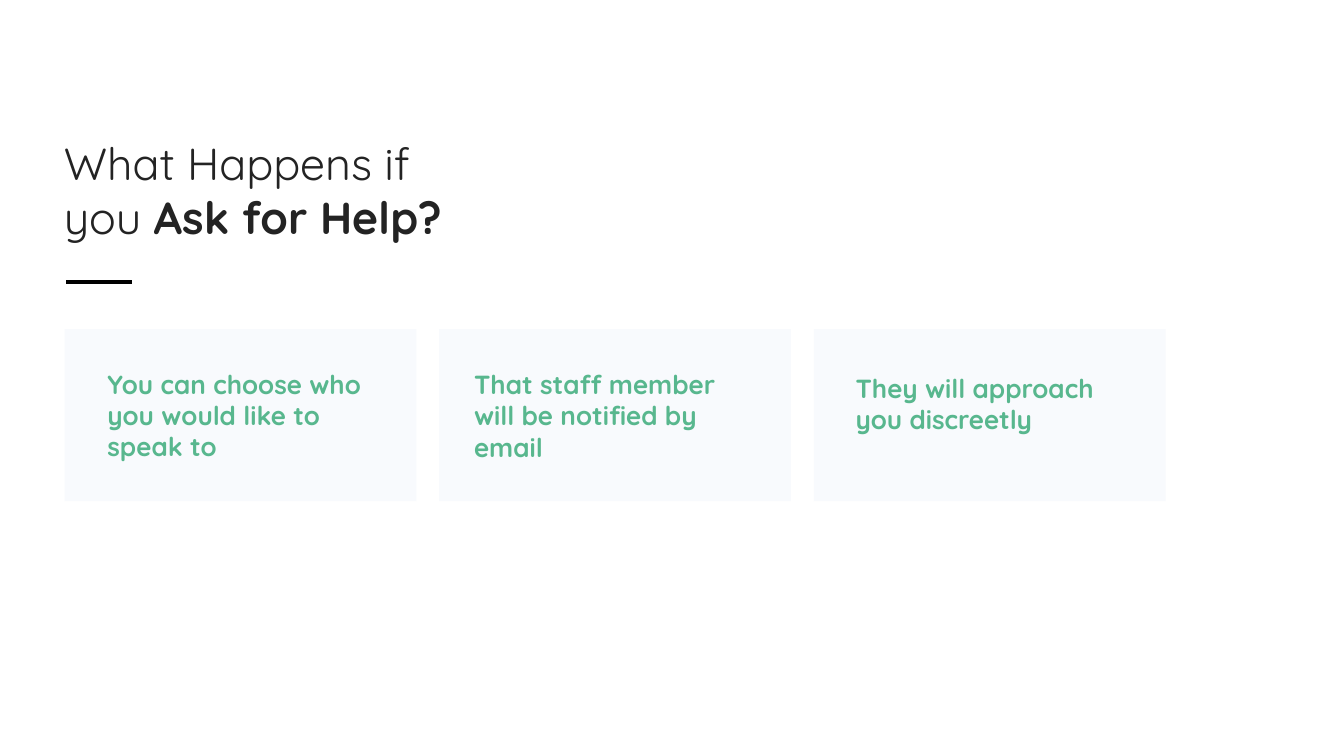
from lxml import etree
from pptx import Presentation
from pptx.dml.color import RGBColor
from pptx.enum import shapes, text
from pptx.oxml import ns
from pptx.util import Cm, Pt

FONT = "Quicksand"
COLORS = {"panel": "F8FAFD", "title": "232323", "step": "58B78E", "rule": "000000"}

PANEL_LEFT, PANEL_TOP = 1.22, 6.22
PANEL_WIDTH, PANEL_HEIGHT = 6.65, 3.25
PANEL_PITCH = 7.08

# Wording, then left, top, width and height of its text box in cm
STEPS = [
    ("You can choose who you would like to speak to", (1.78, 6.95, 5.72, 2.29)),
    ("That staff member will be notified by email", (8.71, 6.96, 5.44, 1.78)),
    ("They will approach you discreetly", (15.92, 7.03, 5.44, 1.85)),
]


def color(name):
    return RGBColor.from_string(COLORS[name])


def add_text(slide, box, pieces, size, color_name, right_inset=0.25):
    """Add one top-anchored paragraph made of (wording, bold) pieces."""
    shape = slide.shapes.add_textbox(*map(Cm, box))
    frame = shape.text_frame
    frame.word_wrap = True
    frame.vertical_anchor = text.MSO_ANCHOR.TOP
    frame.margin_left, frame.margin_right = Cm(0.25), Cm(right_inset)
    frame.margin_top = frame.margin_bottom = Cm(0)
    for wording, bold in pieces:
        run = frame.paragraphs[0].add_run()
        run.text = wording
        run.font.name = FONT
        run.font.size = Pt(size)
        run.font.bold = bold
        run.font.color.rgb = color(color_name)


def add_panel(slide, left):
    shape = slide.shapes.add_shape(
        shapes.MSO_SHAPE.RECTANGLE,
        Cm(left), Cm(PANEL_TOP), Cm(PANEL_WIDTH), Cm(PANEL_HEIGHT))
    shape.shadow.inherit = False
    shape.fill.solid()
    shape.fill.fore_color.rgb = color("panel")
    shape.line.fill.background()


def add_rule(slide, left, right, y):
    line = slide.shapes.add_connector(
        shapes.MSO_CONNECTOR.STRAIGHT, Cm(left), Cm(y), Cm(right), Cm(y))
    line.line.color.rgb = color("rule")
    line.line.width = Pt(2.25)
    etree.SubElement(line._element.spPr, ns.qn("a:effectLst"))


def main():
    presentation = Presentation()
    presentation.slide_width, presentation.slide_height = Cm(25.4), Cm(14.28)
    slide = presentation.slides.add_slide(presentation.slide_layouts[6])

    # Title with its short rule
    add_text(slide, (0.96, 2.57, 8.92, 2.29),
             [("What Happens if you ", False), ("Ask for Help?", True)],
             24, "title", right_inset=1.04)
    add_rule(slide, 1.25, 2.5, 5.32)

    # Three steps, each on its panel
    for index, (wording, box) in enumerate(STEPS):
        add_panel(slide, PANEL_LEFT + index * PANEL_PITCH)
        add_text(slide, box, [(wording, True)], 14, "step")

    presentation.save("out.pptx")


if __name__ == "__main__":
    main()
